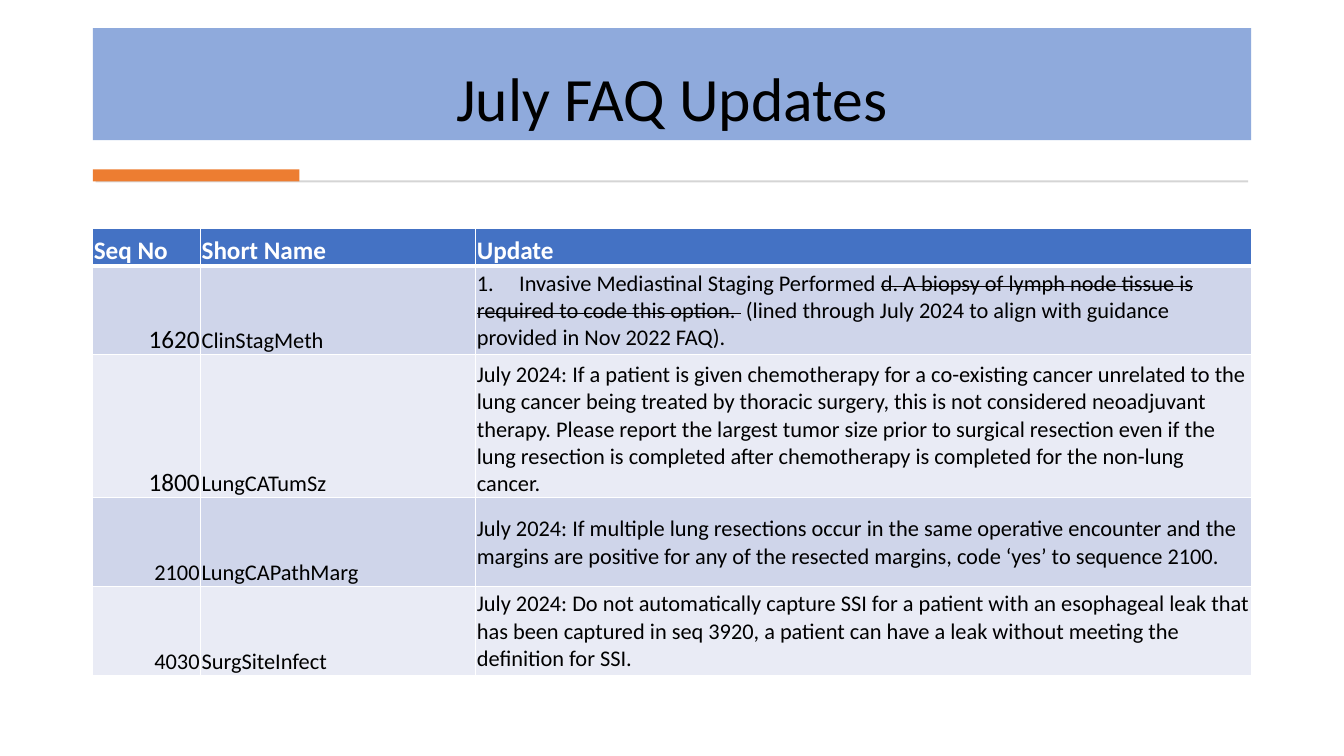
"""Build the July FAQ updates slide with its title band, divider and table."""
from dataclasses import dataclass

from lxml.etree import SubElement
from pptx import Presentation
from pptx.dml.color import RGBColor
from pptx.enum.shapes import MSO_SHAPE as Shape
from pptx.enum.text import MSO_ANCHOR as Anchor, MSO_AUTO_SIZE as AutoSize, PP_ALIGN as Align
from pptx.oxml.ns import qn
from pptx.util import Inches, Pt

FONT = "Calibri"
BLACK = RGBColor(0x00, 0x00, 0x00)
WHITE = RGBColor(0xFF, 0xFF, 0xFF)
TITLE_BLUE = RGBColor(0x8F, 0xAA, 0xDC)
HEADER_BLUE = RGBColor(0x44, 0x72, 0xC4)
BAND_DARK = RGBColor(0xCF, 0xD5, 0xEA)
BAND_LIGHT = RGBColor(0xE9, 0xEB, 0xF5)
RULE_GREY = RGBColor(0xD5, 0xD5, 0xD5)
ACCENT_ORANGE = RGBColor(0xED, 0x7D, 0x31)

LEFT = 0.92
COLUMN_WIDTHS = (1.07, 2.73, 7.69)
HEADINGS = ("Seq No", "Short Name", "Update")
HEADER_HEIGHT = 0.37
NUMBER_TAB = 0.42


@dataclass(frozen=True)
class Span:
    text: str
    size: float = 16
    color: RGBColor = BLACK
    bold: bool = False
    strike: bool = False


@dataclass(frozen=True)
class Bar:
    left: float
    top: float
    width: float
    height: float
    color: RGBColor


@dataclass(frozen=True)
class Update:
    sequence: Span
    short_name: str
    details: tuple[Span, ...]
    height: float = 0.88
    anchor: Anchor = Anchor.MIDDLE


BARS = (
    Bar(0.95, 1.79, 11.43, 0.02, RULE_GREY),
    Bar(LEFT, 1.68, 2.05, 0.12, ACCENT_ORANGE),
)

UPDATES = (
    Update(Span("1620", 18), "ClinStagMeth", (
        Span("1.\t"),
        Span("Invasive Mediastinal Staging Performed "),
        Span("d. A biopsy of lymph node tissue is required to code this option. ", strike=True),
        Span(" (lined through July 2024 to align with guidance provided in Nov 2022 FAQ)."),
    )),
    Update(Span("1800", 18), "LungCATumSz", (
        Span("July 2024: If a patient is given chemotherapy for a co-existing cancer unrelated "
             "to the lung cancer being treated by thoracic surgery, this is not considered "
             "neoadjuvant therapy. Please report the largest tumor size prior to surgical "
             "resection even if the lung resection is completed after chemotherapy is "
             "completed for the non-lung cancer."),
    ), 1.42, Anchor.BOTTOM),
    Update(Span("2100"), "LungCAPathMarg", (
        Span("July 2024: If multiple lung resections occur in the same operative encounter and "
             "the margins are positive for any of the resected margins, code ‘yes’ to "
             "sequence 2100."),
    )),
    Update(Span("4030"), "SurgSiteInfect", (
        Span("July 2024: Do not automatically capture SSI for a patient with an esophageal leak "
             "that has been captured in seq 3920, a patient can have a leak without meeting "
             "the definition for SSI."),
    )),
)


def add_span(para, span: Span) -> None:
    run = para.add_run()
    run.text = span.text
    run.font.name = FONT
    run.font.size = Pt(span.size)
    run.font.bold = span.bold
    run.font.color.rgb = span.color
    if span.strike:
        run.font._element.set("strike", "sngStrike")


def add_tab_stop(para, position: float) -> None:
    stops = SubElement(para._p.get_or_add_pPr(), qn("a:tabLst"))
    SubElement(stops, qn("a:tab"), pos=str(Inches(position)), algn="l")


def add_borders(cell, top: float, bottom: float) -> None:
    properties = cell._tc.get_or_add_tcPr()
    for side, points in (("L", 1), ("R", 1), ("T", top), ("B", bottom)):
        line = SubElement(properties, qn(f"a:ln{side}"), w=str(Pt(points)))
        SubElement(SubElement(line, qn("a:solidFill")), qn("a:srgbClr"), val=str(WHITE))


def fill_cell(cell, spans: tuple[Span, ...], fill: RGBColor, anchor: Anchor = Anchor.BOTTOM,
              align: Align = Align.LEFT, top: float = 1, bottom: float = 1) -> None:
    add_borders(cell, top, bottom)
    cell.fill.solid()
    cell.fill.fore_color.rgb = fill
    cell.vertical_anchor = anchor
    cell.margin_left = cell.margin_right = cell.margin_top = Inches(0.01)
    cell.margin_bottom = 0
    para = cell.text_frame.paragraphs[0]
    para.alignment = align
    if any("\t" in span.text for span in spans):
        add_tab_stop(para, NUMBER_TAB)
    for span in spans:
        add_span(para, span)


def add_title(page, text: str) -> None:
    title = page.shapes.title
    title.left, title.top = Inches(LEFT), Inches(0.28)
    title.width, title.height = Inches(11.49), Inches(1.11)
    title.fill.solid()
    title.fill.fore_color.rgb = TITLE_BLUE
    frame = title.text_frame
    frame.auto_size = AutoSize.NONE
    frame.vertical_anchor = Anchor.BOTTOM
    para = frame.paragraphs[0]
    para.alignment = Align.CENTER
    para.line_spacing = 0.9
    add_span(para, Span(text, 44))


def add_bar(page, bar: Bar) -> None:
    box = page.shapes.add_shape(Shape.RECTANGLE, Inches(bar.left), Inches(bar.top),
                                Inches(bar.width), Inches(bar.height))
    box.shadow.inherit = False
    box.fill.solid()
    box.fill.fore_color.rgb = bar.color
    box.line.fill.background()


def add_updates(page) -> None:
    heights = (HEADER_HEIGHT, *(update.height for update in UPDATES))
    table = page.shapes.add_table(len(heights), len(COLUMN_WIDTHS), Inches(LEFT), Inches(2.27),
                                  Inches(sum(COLUMN_WIDTHS)), Inches(sum(heights))).table
    for column, width in zip(table.columns, COLUMN_WIDTHS):
        column.width = Inches(width)
    for row, height in zip(table.rows, heights):
        row.height = Inches(height)
    for index, heading in enumerate(HEADINGS):
        fill_cell(table.cell(0, index), (Span(heading, 18, WHITE, True),), HEADER_BLUE, bottom=3)
    for index, update in enumerate(UPDATES, start=1):
        fill = BAND_DARK if index % 2 else BAND_LIGHT
        top = 3 if index == 1 else 1
        sequence, short_name, details = table.rows[index].cells
        fill_cell(sequence, (update.sequence,), fill, align=Align.RIGHT, top=top)
        fill_cell(short_name, (Span(update.short_name),), fill, top=top)
        fill_cell(details, update.details, fill, update.anchor, top=top)


def main() -> None:
    deck = Presentation()
    deck.slide_width, deck.slide_height = Inches(13.33), Inches(7.5)
    page = deck.slides.add_slide(deck.slide_layouts[5])
    add_title(page, "July FAQ Updates")
    for bar in BARS:
        add_bar(page, bar)
    add_updates(page)
    deck.save("out.pptx")


if __name__ == "__main__":
    main()
